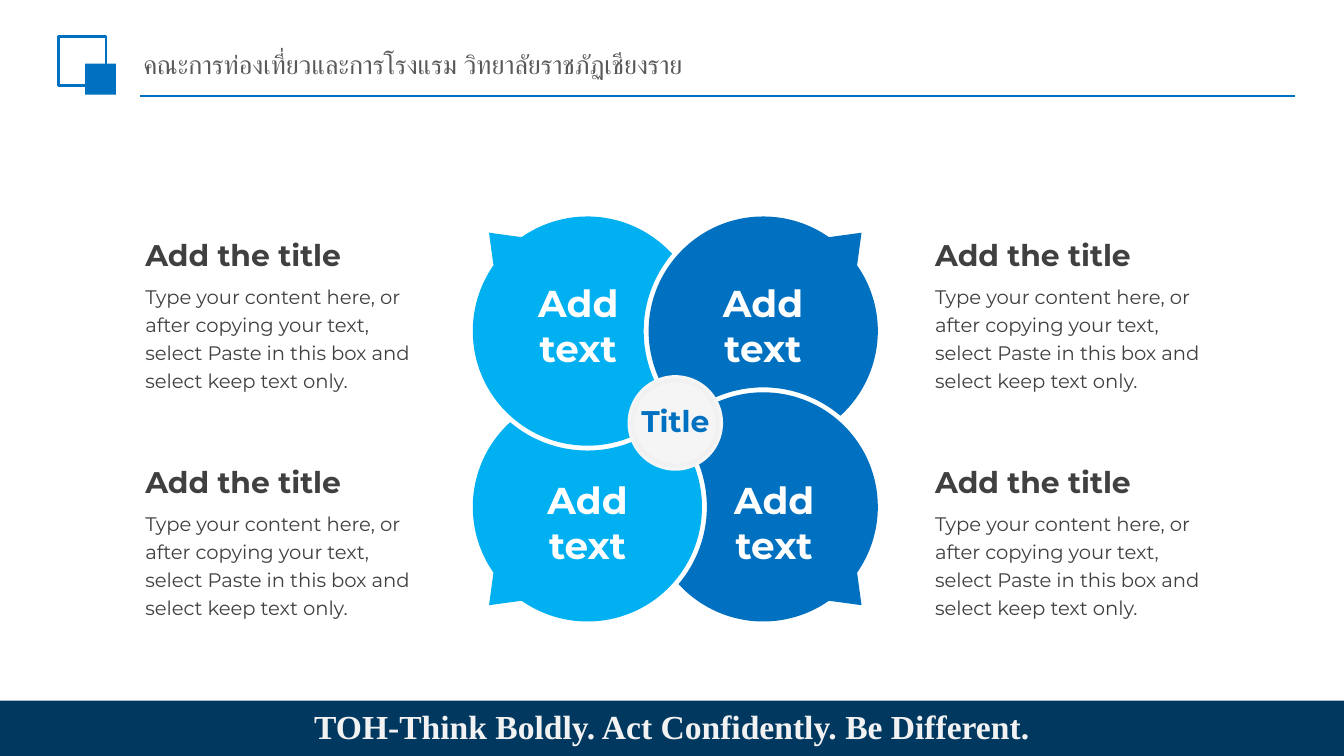
from math import acos, cos, degrees, radians, sin, tan

from lxml.etree import SubElement
from pptx import Presentation
from pptx.dml.color import RGBColor
from pptx.enum.shapes import MSO_CONNECTOR, MSO_SHAPE
from pptx.enum.text import MSO_ANCHOR, PP_ALIGN
from pptx.oxml.ns import qn
from pptx.util import Pt

BLUE = RGBColor(0x00, 0x70, 0xC0)
SKY = RGBColor(0x00, 0xB0, 0xF0)
NAVY = RGBColor(0x00, 0x38, 0x60)
WHITE = RGBColor(0xFF, 0xFF, 0xFF)
PALE = RGBColor(0xF5, 0xF5, 0xF5)
RING = RGBColor(0xF1, 0xF1, 0xF1)
FOOTER_TEXT = RGBColor(0xF2, 0xF2, 0xF2)
DARK_GRAY = RGBColor(0x40, 0x40, 0x40)
HEADER_GRAY = RGBColor(0x59, 0x59, 0x59)

CENTER = (361.8, 224.5)
RADIUS = 61.4
GAP_RADIUS = 64
PETAL_DISTANCE = 66.6
TAIL_REACH = 74.5

deck = Presentation()
deck.slide_width, deck.slide_height = Pt(720), Pt(405)
page = deck.slides.add_slide(deck.slide_layouts[6])


def add_text(text, left, top, width, height, size, color, font="Montserrat",
             bold=False, align=PP_ALIGN.LEFT, anchor=MSO_ANCHOR.TOP,
             inset=(7.2, 3.6), spacing=None):
    """Add a one-paragraph box; inset is (horizontal, vertical) in points."""
    box = page.shapes.add_textbox(Pt(left), Pt(top), Pt(width), Pt(height))
    frame = box.text_frame
    frame.text = text
    frame.word_wrap = True
    frame.vertical_anchor = anchor
    frame.margin_left = frame.margin_right = Pt(inset[0])
    frame.margin_top = frame.margin_bottom = Pt(inset[1])
    paragraph = frame.paragraphs[0]
    paragraph.alignment = align
    paragraph.line_spacing = spacing
    span = paragraph.runs[0]
    span.font.name, span.font.size, span.font.bold = font, Pt(size), bold
    span.font.color.rgb = color


def polar(origin, radius, angle):
    """Return the point at an angle in degrees, clockwise from the right."""
    return (origin[0] + radius * cos(radians(angle)),
            origin[1] + radius * sin(radians(angle)))


# Header rule
rule = page.shapes.add_connector(
    MSO_CONNECTOR.STRAIGHT, Pt(75), Pt(51.6), Pt(694), Pt(51.6))
rule.line.color.rgb, rule.line.width = BLUE, Pt(1.25)
SubElement(rule._element.spPr, qn("a:effectLst"))

# Corner squares and footer bar: left, top, width, height, fill, line, line width
for left, top, width, height, fill, line, weight in [
    (31.2, 19.6, 25.6, 26.4, None, BLUE, 1.5),
    (45.7, 34.1, 16.5, 16.6, BLUE, None, 0),
    (0, 375.4, 720, 29.6, NAVY, None, 0),
]:
    block = page.shapes.add_shape(
        MSO_SHAPE.RECTANGLE, Pt(left), Pt(top), Pt(width), Pt(height))
    block.shadow.inherit = False
    if fill:
        block.fill.solid()
        block.fill.fore_color.rgb = fill
        block.line.fill.background()
    else:
        block.fill.background()
        block.line.color.rgb, block.line.width = line, Pt(weight)

add_text("TOH-Think Boldly. Act Confidently. Be Different.", 96.5, 371.5, 527, 37.4,
         18, FOOTER_TEXT, "Times New Roman", True, PP_ALIGN.CENTER,
         MSO_ANCHOR.MIDDLE, spacing=0.9)

# Pinwheel: each petal is a circle with an outward tail, cut by its neighbour's gap
spread = PETAL_DISTANCE * 2 ** 0.5
cut = (spread ** 2 + RADIUS ** 2 - GAP_RADIUS ** 2) / (2 * spread)
rim_angle = degrees(acos(cut / RADIUS))
bite_angle = degrees(acos((spread - cut) / GAP_RADIUS))
for turn, color in [(180, BLUE), (270, SKY), (0, SKY), (90, BLUE)]:
    hub = polar(CENTER, PETAL_DISTANCE, turn + 225)
    neighbour = polar(hub, spread, turn)
    tail = [polar(hub, TAIL_REACH, turn + 225), polar(hub, RADIUS, turn + 235)]
    # Each segment lists its end point, after two control points if it is an arc
    segments = []
    for middle, radius, start, end in [
        (hub, RADIUS, rim_angle, 90),
        (hub, RADIUS, 90, 180),
        (hub, RADIUS, 180, 215),
        (hub, RADIUS, 235, 270),
        (hub, RADIUS, 270, 360 - rim_angle),
        (neighbour, GAP_RADIUS, 180 + bite_angle, 180),
        (neighbour, GAP_RADIUS, 180, 180 - bite_angle),
    ]:
        if start == 235:
            segments += [[point] for point in tail]
        handle = radius * 4 / 3 * tan(radians(end - start) / 4)
        first = polar(middle, radius, turn + start)
        last = polar(middle, radius, turn + end)
        segments.append([polar(first, handle, turn + start + 90),
                         polar(last, -handle, turn + end + 90), last])
    corners = [(Pt(x), Pt(y)) for x, y in (segment[-1] for segment in segments)]
    builder = page.shapes.build_freeform(*corners[-1])
    builder.add_line_segments(corners, close=True)
    petal = builder.convert_to_shape()
    petal.shadow.inherit = False
    petal.fill.solid()
    petal.fill.fore_color.rgb = color
    petal.line.fill.background()
    edges = list(petal._element.iter(qn("a:lnTo")))
    for edge, segment in zip(edges, segments):
        if len(segment) == 3:
            edge.tag = qn("a:cubicBezTo")
            edge.remove(edge[0])
            for x, y in segment:
                SubElement(edge, qn("a:pt"), x=str(Pt(x) - petal.left),
                           y=str(Pt(y) - petal.top))

# Centre disc
disc = page.shapes.add_shape(
    MSO_SHAPE.OVAL, Pt(336.2), Pt(201), Pt(51.2), Pt(51.2))
disc.shadow.inherit = False
disc.fill.solid()
disc.fill.fore_color.rgb = PALE
disc.line.fill.background()

add_text("Title", 340.8, 216, 42, 19.4, 16, BLUE, bold=True,
         align=PP_ALIGN.CENTER, inset=(0, 0))
for left, top, width, height in [(274.8, 150.2, 70, 48.2), (376.8, 150.2, 64, 48.2),
                                 (282.8, 255.5, 64, 72.7), (384.5, 255.5, 60.5, 48.2)]:
    add_text("Add text", left, top, width, height, 20, WHITE, bold=True,
             align=PP_ALIGN.CENTER, inset=(0, 0))

ring = page.shapes.add_shape(
    MSO_SHAPE.OVAL, Pt(339), Pt(203.8), Pt(45.6), Pt(45.6))
ring.shadow.inherit = False
ring.fill.background()
ring.line.color.rgb, ring.line.width = RING, Pt(2)

# Side captions
for left in (70.8, 493.9):
    for top in (123.2, 244.9):
        add_text("Type your content here, or after copying your text, "
                 "select Paste in this box and select keep text only.",
                 left, top + 23.2, 164, 68.4, 10.5, DARK_GRAY, spacing=1.2)
        add_text("Add the title", left, top, 128, 26.6, 16, DARK_GRAY, bold=True)

add_text("คณะการท่องเที่ยวและการโรงแรม วิทยาลัยราชภัฏเชียงราย", 71.8, 21.2, 464.4, 26,
         14, HEADER_GRAY, "Arial", anchor=MSO_ANCHOR.MIDDLE, inset=(5, 2.9))

deck.save("out.pptx")
